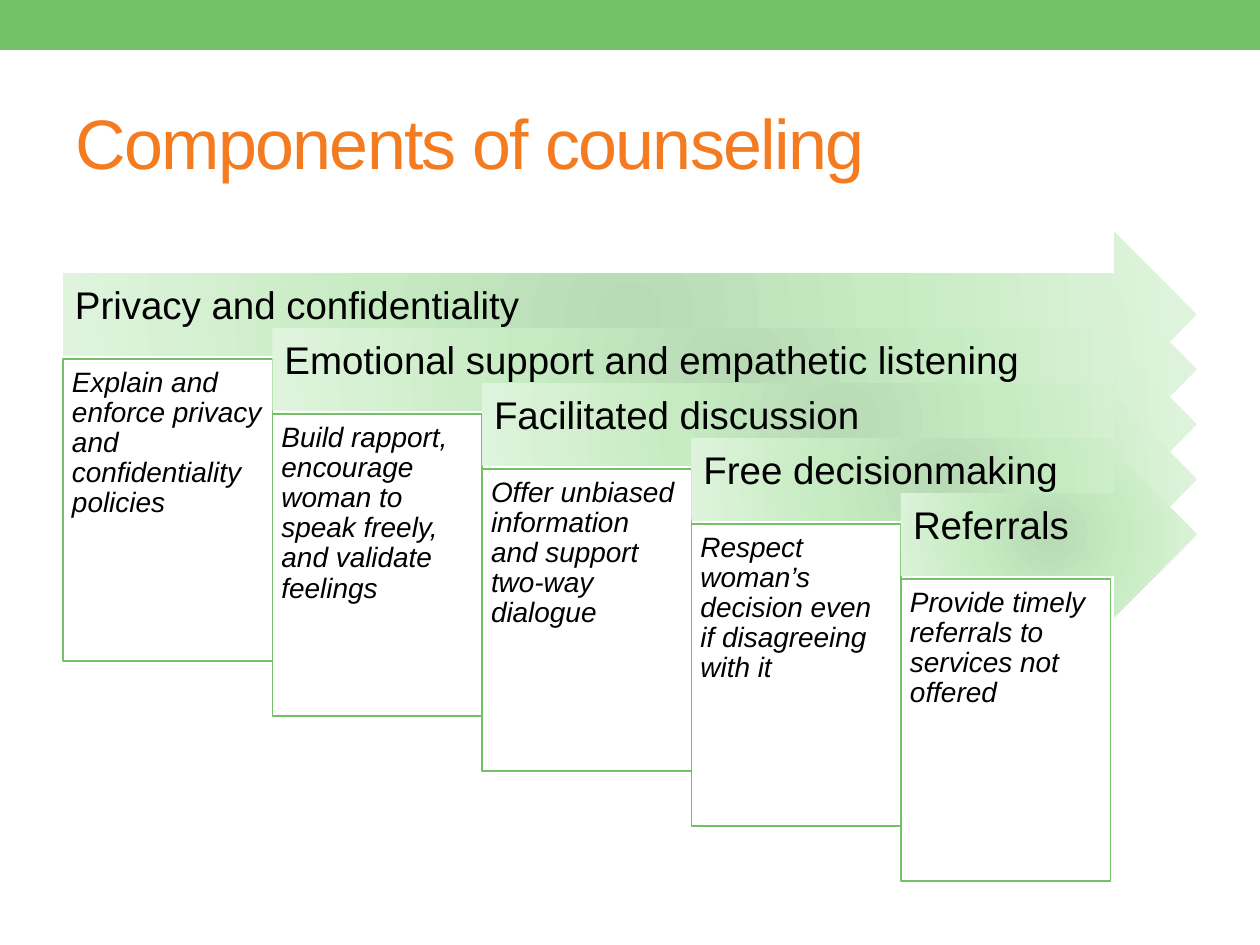
"""Build the slide on the components of counseling."""
import pptx
import pptx.dml.color
import pptx.enum.shapes
import pptx.enum.text
import pptx.oxml
import pptx.oxml.ns
import pptx.util

RGBColor = pptx.dml.color.RGBColor
SHAPES = pptx.enum.shapes.MSO_SHAPE
ANCHOR = pptx.enum.text.MSO_ANCHOR

GREEN = RGBColor(0x73, 0xC1, 0x67)
ORANGE = RGBColor(0xF4, 0x7B, 0x20)
BLACK = RGBColor(0x00, 0x00, 0x00)
WHITE = RGBColor(0xFF, 0xFF, 0xFF)
ARROW_STOPS = [
    (0, RGBColor(0xB8, 0xDA, 0xB5)),
    (45, RGBColor(0xC6, 0xEB, 0xC2)),
    (100, RGBColor(0xE0, 0xF4, 0xDD)),
]

TITLE = "Components of counseling"
COMPONENTS = [
    ("Privacy and confidentiality",
     "Explain and enforce privacy and confidentiality policies"),
    ("Emotional support and empathetic listening",
     "Build rapport, encourage woman to speak freely, and validate feelings"),
    ("Facilitated discussion",
     "Offer unbiased information and support two-way dialogue"),
    ("Free decisionmaking",
     "Respect woman’s decision even if disagreeing with it"),
    ("Referrals",
     "Provide timely referrals to services not offered"),
]

EMU_PER_PX = 914400 / 126
SLIDE_WIDTH, SLIDE_HEIGHT = 1260, 945
BAND_HEIGHT = 50
TITLE_BOX = (63, 73, 1134, 136)
LEFT, RIGHT = 63, 1197
ARROW_TOP, ARROW_HEIGHT = 232, 165
BOX_DROP, BOX_HEIGHT = 127, 302
COLUMN_WIDTH, STEP_DOWN = 209.5, 55
TITLE_INSETS = (13, 6, 13, 6)
ARROW_INSETS = (12, 12, 35, 27)
BOX_INSETS = (9, 9, 9, 9)


def px(length):
    return pptx.util.Emu(round(length * EMU_PER_PX))


def add_shape(slide, kind, left, top, width, height):
    shape = slide.shapes.add_shape(kind, px(left), px(top), px(width), px(height))
    shape.shadow.inherit = False
    shape.line.fill.background()
    return shape


def fill_solid(shape, color):
    shape.fill.solid()
    shape.fill.fore_color.rgb = color


def fill_radial(shape, stops):
    shape.fill.gradient()
    gradient = shape.element.spPr.find(pptx.oxml.ns.qn("a:gradFill"))
    stop_xml = "".join(
        f'<a:gs pos="{position * 1000}"><a:srgbClr val="{color}"/></a:gs>'
        for position, color in stops
    )
    radial = pptx.oxml.parse_xml(
        f'<a:gradFill {pptx.oxml.ns.nsdecls("a")} rotWithShape="1">'
        f'<a:gsLst>{stop_xml}</a:gsLst><a:path path="circle">'
        '<a:fillToRect l="100000" t="100000" r="100000" b="100000"/>'
        '</a:path></a:gradFill>'
    )
    gradient.getparent().replace(gradient, radial)


def write(shape, text, size, color, insets, anchor, spacing=0.9, italic=None):
    frame = shape.text_frame
    frame.word_wrap = True
    frame.vertical_anchor = anchor
    frame.margin_left, frame.margin_top, frame.margin_right, frame.margin_bottom = map(px, insets)
    paragraph = frame.paragraphs[0]
    paragraph.alignment = pptx.enum.text.PP_ALIGN.LEFT
    paragraph.line_spacing = spacing
    run = paragraph.add_run()
    run.text = text
    run.font.name = "Arial"
    run.font.size = pptx.util.Pt(size)
    run.font.color.rgb = color
    run.font.italic = italic
    return run


def add_component(slide, index, heading, detail):
    left = LEFT + index * COLUMN_WIDTH
    top = ARROW_TOP + index * STEP_DOWN
    arrow = add_shape(slide, SHAPES.RIGHT_ARROW, left, top, RIGHT - left, ARROW_HEIGHT)
    fill_radial(arrow, ARROW_STOPS)
    write(arrow, heading, 22, BLACK, ARROW_INSETS, ANCHOR.MIDDLE)

    box = add_shape(slide, SHAPES.RECTANGLE, left, top + BOX_DROP, COLUMN_WIDTH, BOX_HEIGHT)
    fill_solid(box, WHITE)
    box.line.color.rgb = GREEN
    box.line.width = pptx.util.Pt(0.75)
    write(box, detail, 16, BLACK, BOX_INSETS, ANCHOR.TOP, italic=True)


def main():
    presentation = pptx.Presentation()
    presentation.slide_width = px(SLIDE_WIDTH)
    presentation.slide_height = px(SLIDE_HEIGHT)
    slide = presentation.slides.add_slide(presentation.slide_layouts[6])

    band = add_shape(slide, SHAPES.RECTANGLE, 0, 0, SLIDE_WIDTH, BAND_HEIGHT)
    fill_solid(band, GREEN)

    title = slide.shapes.add_textbox(*map(px, TITLE_BOX))
    run = write(title, TITLE, 40, ORANGE, TITLE_INSETS, ANCHOR.MIDDLE, spacing=1.0)
    run.font._element.set("spc", "-100")

    for index, (heading, detail) in enumerate(COMPONENTS):
        add_component(slide, index, heading, detail)

    presentation.save("out.pptx")


if __name__ == "__main__":
    main()
